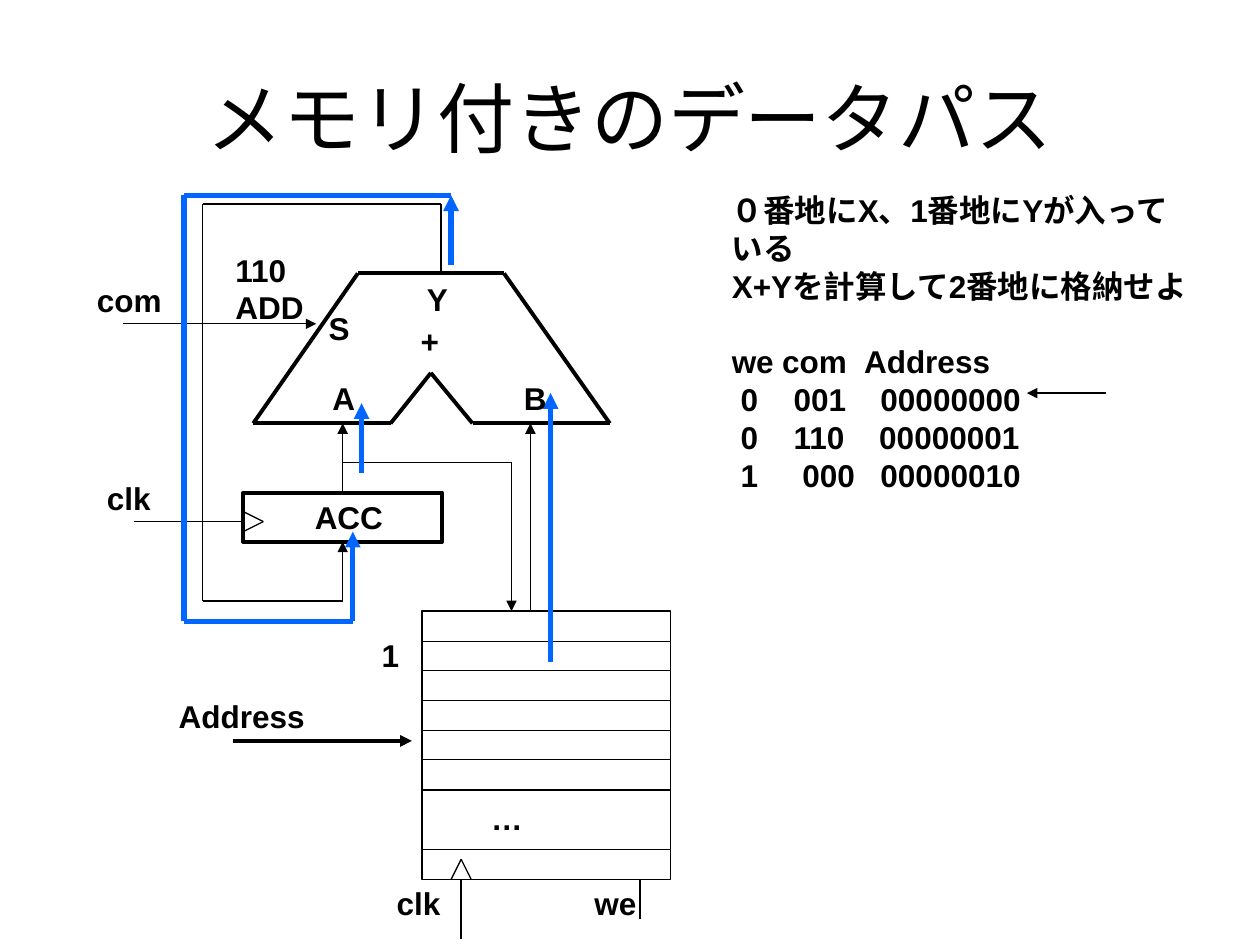
from dataclasses import dataclass
from itertools import pairwise

from lxml.etree import SubElement
from pptx import Presentation
from pptx.dml.color import RGBColor
from pptx.enum.shapes import MSO_CONNECTOR as Connector
from pptx.enum.shapes import MSO_SHAPE as Preset
from pptx.enum.text import MSO_ANCHOR as Anchor
from pptx.enum.text import MSO_AUTO_SIZE as AutoSize
from pptx.enum.text import PP_ALIGN as Align
from pptx.oxml.ns import qn
from pptx.util import Emu, Pt

PX = 9144  # 100 px to the inch
COLORS = {"ink": "000000", "active": "0066FF"}
LABEL_FORMAT = {"name": "Arial", "size": Pt(18), "bold": True}
TITLE_FORMAT = {"name": "Arial", "size": Pt(44), "bold": False}
THIN, THICK, BOLD = 0.75, 2.25, 3
TOP, BOTTOM = 0, 2


@dataclass(frozen=True)
class Line:
    text: str
    tabs: tuple[int, ...] = ()
    space_before: float = 0


@dataclass(frozen=True)
class Label:
    left: int
    top: int
    width: int
    height: int
    lines: tuple[Line, ...]
    wrap: bool = False


@dataclass(frozen=True)
class Wire:
    points: tuple[tuple[int, int], ...]
    weight: float = THIN
    color: str = "ink"
    arrow: bool = False


def px(length: float) -> Emu:
    return Emu(round(length * PX))


def rgb(color: str) -> RGBColor:
    return RGBColor.from_string(COLORS[color])


def add_text(slide, label: Label, text_format: dict = LABEL_FORMAT):
    box = slide.shapes.add_textbox(
        px(label.left), px(label.top), px(label.width), px(label.height))
    frame = box.text_frame
    frame.word_wrap = label.wrap
    for index, line in enumerate(label.lines):
        paragraph = frame.add_paragraph() if index else frame.paragraphs[0]
        if line.space_before:
            paragraph.space_before = Pt(line.space_before)
        if line.tabs:
            stops = SubElement(paragraph._p.get_or_add_pPr(), qn("a:tabLst"))
            for stop in line.tabs:
                SubElement(stops, qn("a:tab"), pos=str(px(stop)), algn="l")
        run = paragraph.add_run()
        run.text = line.text
        for name, value in text_format.items():
            setattr(run.font, name, value)
        run.font.color.rgb = rgb("ink")
    return frame


def add_wire(slide, wire: Wire) -> list:
    """Draw one straight connector per leg; an arrowhead goes on the last."""
    legs = []
    for (x1, y1), (x2, y2) in pairwise(wire.points):
        leg = slide.shapes.add_connector(
            Connector.STRAIGHT, px(x1), px(y1), px(x2), px(y2))
        leg.line.width = Pt(wire.weight)
        leg.line.color.rgb = rgb(wire.color)
        SubElement(leg.element.spPr, qn("a:effectLst"))
        legs.append(leg)
    if wire.arrow:
        SubElement(legs[-1].line._get_or_add_ln(), qn("a:tailEnd"), type="triangle")
    return legs


def add_box(slide, left: int, top: int, width: int, height: int, weight: float):
    box = slide.shapes.add_shape(
        Preset.RECTANGLE, px(left), px(top), px(width), px(height))
    box.shadow.inherit = False
    box.fill.background()
    box.line.width = Pt(weight)
    box.line.color.rgb = rgb("ink")
    return box


def add_memory(slide) -> None:
    """Stack the memory words; the seventh one is two units high."""
    units = (0, 1, 2, 3, 4, 5, 6, 8, 9)
    edges = [485 + round(213 * unit / 9) for unit in units]
    for top, bottom in pairwise(edges):
        add_box(slide, 335, top, 197, bottom - top, THIN)


TITLE = Label(50, 30, 900, 125, (Line("メモリ付きのデータパス"),), wrap=True)

LABELS = [
    Label(left, top, width, 40, (Line(text),))
    for text, left, top, width in (
        ("A", 254, 296, 38), ("B", 406, 296, 38), ("Y", 329, 217, 37),
        ("S", 251, 240, 37), ("+", 324, 251, 35), ("ACC", 240, 390, 74),
        ("…", 380, 629, 45), ("we", 462, 697, 60), ("Address", 132, 548, 120),
        ("clk", 305, 697, 55), ("clk", 75, 375, 55), ("com", 67, 218, 72),
        ("1", 293, 500, 34),
    )
] + [
    Label(177, 194, 74, 70, (Line("110"), Line("ADD"))),
    Label(571, 147, 386, 280, (
        Line("０番地にX、1番地にYが入っている"),
        Line("X+Yを計算して2番地に格納せよ"),
        Line("we\tcom\tAddress", (40, 105), space_before=21.5),
        Line("\t0\t001\t00000000", (7, 49, 118)),
        Line("\t0\t110\t00000001", (7, 49, 117)),
        Line("\t1\t000\t00000010", (7, 56, 118)),
    ), wrap=True),
]

ACC_TO_A = Wire(((272, 391), (272, 336)), arrow=True)
Y_TO_ACC = Wire(((350, 217), (350, 162), (161, 162), (161, 477), (272, 477),
                 (272, 430)), arrow=True)

WIRES = [
    # ALU outline
    Wire(((284, 217), (400, 217), (484, 336), (375, 336), (342, 296),
          (310, 336), (201, 336), (284, 217)), THICK),
    # Control and clock inputs
    Wire(((98, 257), (251, 257)), arrow=True),
    Wire(((106, 414), (193, 414))),
    Wire(((193, 406), (209, 414), (193, 422))),
    Wire(((366, 745), (366, 698))),
    Wire(((358, 698), (366, 682), (374, 698))),
    Wire(((508, 729), (508, 698))),
    # Memory address and data
    Wire(((185, 588), (327, 588)), THICK, arrow=True),
    Wire(((272, 367), (406, 367), (406, 485)), arrow=True),
    Wire(((421, 485), (421, 336)), arrow=True),
    # Current row of the control table
    Wire(((878, 312), (815, 312)), arrow=True),
    # Active data flow
    Wire(((437, 525), (437, 312)), BOLD, "active", True),
    Wire(((287, 375), (287, 320)), BOLD, "active", True),
    Wire(((358, 210), (358, 155)), BOLD, "active", True),
    Wire(((358, 155), (146, 155), (146, 493), (280, 493), (280, 422)),
         BOLD, "active", True),
]


def main() -> None:
    deck = Presentation()
    deck.slide_width, deck.slide_height = px(1000), px(750)
    slide = deck.slides.add_slide(deck.slide_layouts[6])

    heading = add_text(slide, TITLE, TITLE_FORMAT)
    heading.vertical_anchor = Anchor.MIDDLE
    heading.paragraphs[0].alignment = Align.CENTER

    accumulator = add_box(slide, 193, 391, 158, 39, THICK)
    add_memory(slide)
    add_wire(slide, ACC_TO_A)[0].begin_connect(accumulator, TOP)
    add_wire(slide, Y_TO_ACC)[-1].end_connect(accumulator, BOTTOM)
    for wire in WIRES:
        add_wire(slide, wire)
    for label in LABELS:
        add_text(slide, label).auto_size = AutoSize.SHAPE_TO_FIT_TEXT

    deck.save("out.pptx")


if __name__ == "__main__":
    main()
